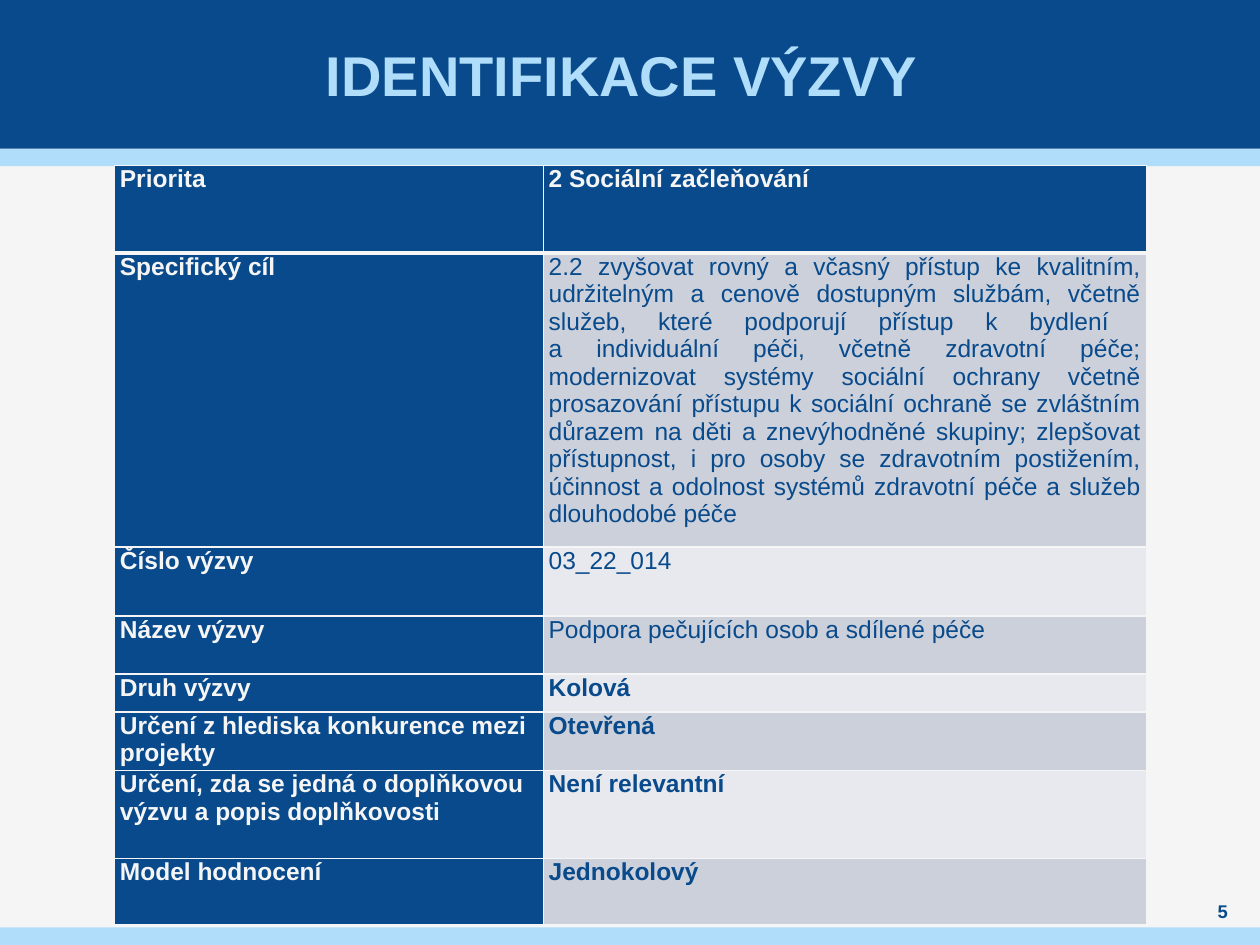
from lxml import etree
from pptx import Presentation
from pptx.dml.color import RGBColor
from pptx.enum.shapes import MSO_SHAPE
from pptx.enum.text import MSO_ANCHOR, PP_ALIGN
from pptx.oxml.ns import qn
from pptx.util import Pt

RECT = MSO_SHAPE.RECTANGLE
MIDDLE = MSO_ANCHOR.MIDDLE
LEFT, CENTER, JUSTIFY = PP_ALIGN.LEFT, PP_ALIGN.CENTER, PP_ALIGN.JUSTIFY

NAVY = RGBColor(0x08, 0x4A, 0x8B)
SKY = RGBColor(0xAF, 0xDD, 0xFA)
PAPER = RGBColor(0xF5, 0xF5, 0xF5)
BAND_DARK = RGBColor(0xCC, 0xD0, 0xDA)
BAND_LIGHT = RGBColor(0xE7, 0xE9, 0xEE)
FONT = "Arial"

# Content
TITLE = "IDENTIFIKACE VÝZVY "
PAGE_NUMBER = "5"
GOAL = (
    "2.2 zvyšovat rovný a včasný přístup ke kvalitním, udržitelným a cenově "
    "dostupným službám, včetně služeb, které podporují přístup k bydlení \n"
    "a individuální péči, včetně zdravotní péče; modernizovat systémy sociální "
    "ochrany včetně prosazování přístupu k sociální ochraně se zvláštním důrazem "
    "na děti a znevýhodněné skupiny; zlepšovat přístupnost, i pro osoby se "
    "zdravotním postižením, účinnost a odolnost systémů zdravotní péče a služeb "
    "dlouhodobé péče"
)
# label, value, value alignment, value bold, row height
CALL_ROWS = [
    ("Priorita", "2 Sociální začleňování", JUSTIFY, True, 50),
    ("Specifický cíl", GOAL, JUSTIFY, False, 168),
    ("Číslo výzvy", "03_22_014", JUSTIFY, False, 39.4),
    ("Název výzvy", "Podpora pečujících osob a sdílené péče", JUSTIFY, False, 33.1),
    ("Druh výzvy", "Kolová", LEFT, True, 21.7),
    ("Určení z hlediska konkurence mezi projekty", "Otevřená", LEFT, True, 33.4),
    ("Určení, zda se jedná o doplňkovou výzvu a popis doplňkovosti",
     "Není relevantní", LEFT, True, 50.2),
    ("Model hodnocení", "Jednokolový", LEFT, True, 37.6),
]
COLUMN_WIDTHS = (245, 344.5)
TABLE_LEFT, TABLE_TOP = 65.5, 94.5
# top, height, colour
BARS = [(85, 10, SKY), (0, 85, NAVY), (530, 10, SKY)]
SLIDE_WIDTH, SLIDE_HEIGHT = 720, 540


def add_text(paragraph, text, size, color, bold, align):
    paragraph.alignment = align
    for number, line in enumerate(text.split("\n")):
        if number:
            paragraph.add_line_break()
        run = paragraph.add_run()
        run.text = line
        run.font.name = FONT
        run.font.size = Pt(size)
        run.font.bold = bold
        run.font.color.rgb = color


def set_margins(frame, side):
    frame.margin_left = frame.margin_right = Pt(side)
    frame.margin_top = frame.margin_bottom = 0


def place(shape, left, top, width, height):
    shape.left, shape.top = Pt(left), Pt(top)
    shape.width, shape.height = Pt(width), Pt(height)


def set_borders(cell, top, bottom):
    properties = cell._tc.get_or_add_tcPr()
    sides = (("a:lnL", 1), ("a:lnR", 1), ("a:lnT", top), ("a:lnB", bottom))
    for position, (tag, width) in enumerate(sides):
        line = etree.Element(qn(tag), w=str(Pt(width)))
        fill = etree.SubElement(line, qn("a:solidFill"))
        etree.SubElement(fill, qn("a:srgbClr"), val=str(PAPER))
        properties.insert(position, line)


def fill_cell(cell, text, color, bold, align, background):
    cell.fill.solid()
    cell.fill.fore_color.rgb = background
    set_margins(cell, 0)
    paragraph = cell.text_frame.paragraphs[0]
    add_text(paragraph, text, 14, color, bold, align)
    paragraph.space_before = paragraph.space_after = Pt(3)
    indents = paragraph._p.get_or_add_pPr()
    for side in ("marL", "marR"):
        indents.set(side, str(Pt(3)))


def main():
    deck = Presentation()
    deck.slide_width, deck.slide_height = Pt(SLIDE_WIDTH), Pt(SLIDE_HEIGHT)
    slide = deck.slides.add_slide(deck.slide_layouts[5])
    slide.background.fill.solid()
    slide.background.fill.fore_color.rgb = PAPER
    shapes = slide.shapes

    # Coloured bars
    for top, height, color in BARS:
        bar = shapes.add_shape(RECT, 0, Pt(top), Pt(SLIDE_WIDTH), Pt(height))
        bar.shadow.inherit = False
        bar.fill.solid()
        bar.fill.fore_color.rgb = color
        bar.line.fill.background()

    # Title, brought in front of the bars
    title = shapes.title
    bar.element.addnext(title.element)
    place(title, 28, 0, 663, 85)
    set_margins(title.text_frame, 3)
    title.text_frame.vertical_anchor = MIDDLE
    add_text(title.text_frame.paragraphs[0], TITLE, 32, SKY, True, CENTER)

    # Page number
    page = shapes.add_textbox(Pt(680.4), Pt(513.4), Pt(36.7), Pt(14.4)).text_frame
    page.word_wrap = True
    page.vertical_anchor = MIDDLE
    set_margins(page, 0)
    add_text(page.paragraphs[0], PAGE_NUMBER, 10.5, NAVY, True, CENTER)
    page.paragraphs[0].space_after = Pt(6)

    # Table of the call's details
    table = shapes.add_table(
        len(CALL_ROWS), len(COLUMN_WIDTHS), Pt(TABLE_LEFT), Pt(TABLE_TOP),
        Pt(sum(COLUMN_WIDTHS)), Pt(sum(row[-1] for row in CALL_ROWS))).table
    for column, width in zip(table.columns, COLUMN_WIDTHS):
        column.width = Pt(width)
    for index, (label, value, align, bold, height) in enumerate(CALL_ROWS):
        table.rows[index].height = Pt(height)
        label_cell, value_cell = table.cell(index, 0), table.cell(index, 1)
        band = BAND_DARK if index % 2 else BAND_LIGHT
        color, background = (NAVY, band) if index else (PAPER, NAVY)
        fill_cell(label_cell, label, PAPER, True, LEFT, NAVY)
        fill_cell(value_cell, value, color, bold, align, background)
        for cell in (label_cell, value_cell):
            set_borders(cell, top=3 if index == 1 else 1,
                        bottom=3 if index == 0 else 1)

    deck.save("out.pptx")


if __name__ == "__main__":
    main()
